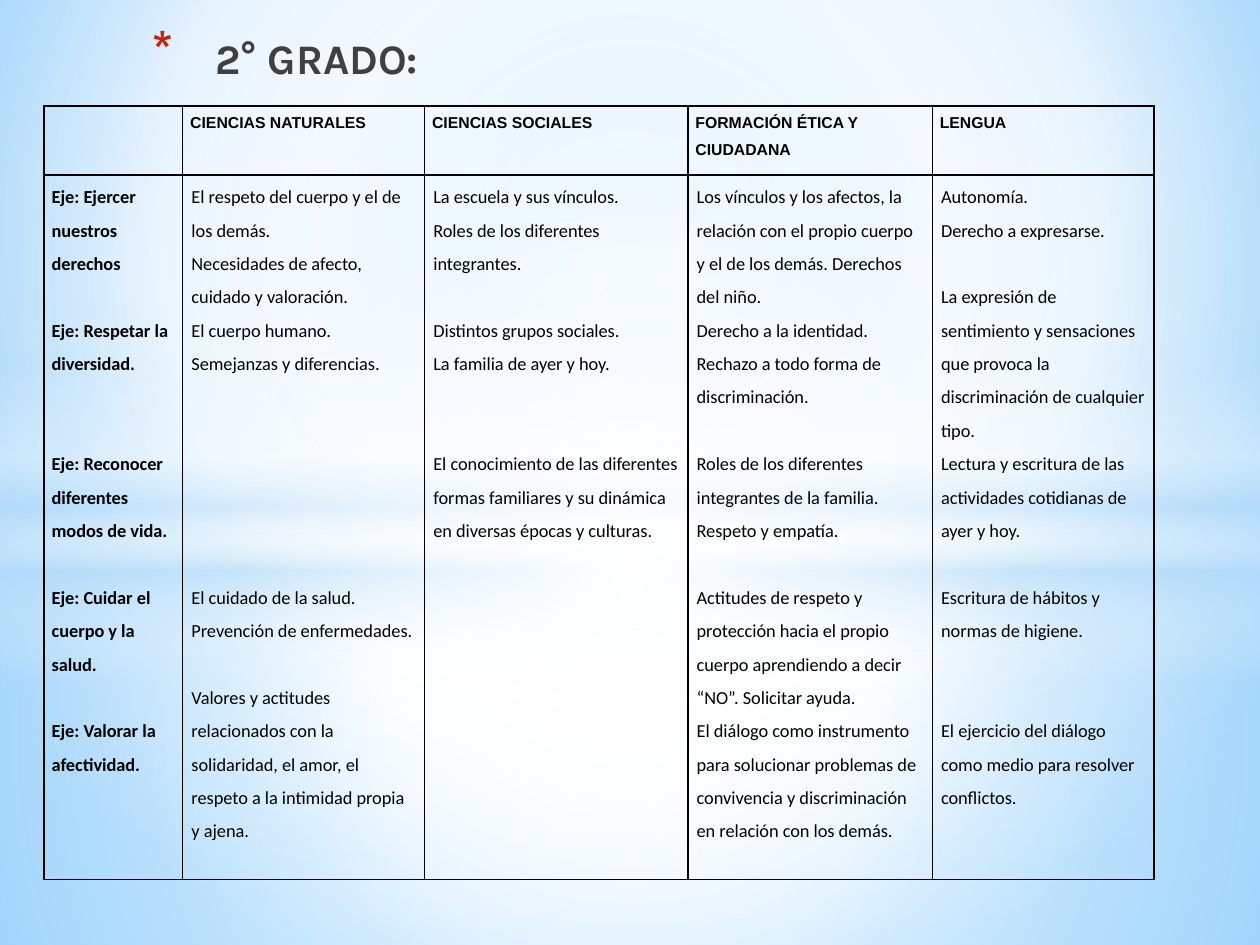
from lxml.etree import SubElement
from pptx import Presentation
from pptx.dml.color import RGBColor
from pptx.enum.shapes import MSO_SHAPE
from pptx.enum.text import MSO_ANCHOR, PP_ALIGN
from pptx.oxml import parse_xml
from pptx.oxml.ns import nsdecls, qn
from pptx.util import Pt

COLORS = {"white": "FFFFFF", "pale": "B4DCFA", "sky": "9ED5FF", "azure": "5BB9FF",
          "title": "404040", "bullet": "C3260C", "ink": "000000"}
CENTER = (50, 50, 50, 50)
BACKDROP = ([(0, "sky", 100), (60, "white", 100), (100, "azure", 100)], (20, 10, 20, 60))
GLOWS = [
    (MSO_SHAPE.RECTANGLE, (0, 304.56, 720, 235.44),
     [(0, "white", 91), (37, "white", 76), (100, "pale", 79)], CENTER),
    (MSO_SHAPE.RECTANGLE, (0, 0, 720, 304.56),
     [(0, "white", 89), (48, "white", 62), (100, "pale", 79)], CENTER),
    (MSO_SHAPE.RECTANGLE, (0, 208.8, 720, 180),
     [(0, "white", 0), (29, "white", 30), (45, "pale", 40), (55, "white", 26),
      (65, "pale", 60), (100, "white", 0)], None),
    (MSO_SHAPE.OVAL, (0, 126, 720, 401.76), [(0, "white", 100), (54, "white", 0)], CENTER),
]

LINE_PITCH = 19.08
COLUMN_WIDTHS = (79.2, 138.24, 150.48, 139.68, 126.72)
ROW_HEIGHTS = (39.6, 402.48)
HEADER_FORMAT = {"name": "Arial", "size": Pt(9), "bold": True}
AXIS_FORMAT = {"name": "Calibri", "size": Pt(10.5), "bold": True}
CONTENT_FORMAT = {"name": "Calibri", "size": Pt(10.5), "bold": False}
SUBJECTS = ("", "CIENCIAS NATURALES", "CIENCIAS SOCIALES", "FORMACIÓN ÉTICA Y CIUDADANA", "LENGUA")
TOPICS = (
    [(0, "Eje: Ejercer nuestros derechos"),
     (1, "Eje: Respetar la diversidad."),
     (2, "Eje: Reconocer diferentes modos de vida."),
     (1, "Eje: Cuidar el cuerpo y la salud."),
     (1, "Eje: Valorar la afectividad.")],
    [(0, "El respeto del cuerpo y el de los demás."),
     (0, "Necesidades de afecto, cuidado y valoración."),
     (0, "El cuerpo humano."),
     (0, "Semejanzas y diferencias."),
     (6, "El cuidado de la salud."),
     (0, "Prevención de enfermedades."),
     (1, "Valores y actitudes relacionados con la solidaridad, el amor, "
         "el respeto a la intimidad propia y ajena.")],
    [(0, "La escuela y sus vínculos."),
     (0, "Roles de los diferentes integrantes."),
     (1, "Distintos grupos sociales."),
     (0, "La familia de ayer y hoy."),
     (2, "El conocimiento de las diferentes formas familiares y su dinámica "
         "en diversas épocas y culturas.")],
    [(0, "Los vínculos y los afectos, la relación con el propio cuerpo "
         "y el de los demás. Derechos del niño."),
     (0, "Derecho a la identidad."),
     (0, "Rechazo a todo forma de discriminación."),
     (1, "Roles de los diferentes integrantes de la familia."),
     (0, "Respeto y empatía."),
     (1, "Actitudes de respeto y protección hacia el propio cuerpo "
         "aprendiendo a decir “NO”. Solicitar ayuda."),
     (0, "El diálogo como instrumento para solucionar problemas de convivencia "
         "y discriminación en relación con los demás.")],
    [(0, "Autonomía."),
     (0, "Derecho a expresarse."),
     (1, "La expresión de sentimiento y sensaciones que provoca "
         "la discriminación de cualquier tipo."),
     (0, "Lectura y escritura de las actividades cotidianas de ayer y hoy."),
     (1, "Escritura de hábitos y normas de higiene."),
     (2, "El ejercicio del diálogo como medio para resolver conflictos.")],
)


def apply_format(target, values):
    """Set each attribute named in the format values."""
    for name, value in values.items():
        setattr(target, name, value)


def apply_gradient(fill, owner, stops, focus):
    """Give a fill its stops, radial around a focus or running downwards."""
    fill.gradient()
    gradient = owner.find(".//" + qn("a:gradFill"))
    for child in list(gradient):
        gradient.remove(child)
    stop_list = SubElement(gradient, qn("a:gsLst"))
    for position, color, opacity in stops:
        stop = SubElement(stop_list, qn("a:gs"), pos=str(position * 1000))
        tint = SubElement(stop, qn("a:srgbClr"), val=COLORS[color])
        SubElement(tint, qn("a:alpha"), val=str(opacity * 1000))
    if focus:
        circle = SubElement(gradient, qn("a:path"), path="circle")
        SubElement(circle, qn("a:fillToRect"),
                   {side: str(share * 1000) for side, share in zip("ltrb", focus)})
    else:
        SubElement(gradient, qn("a:lin"), ang="5400000", scaled="0")


def add_backdrop(slide):
    """Paint the sky background and its layered glows."""
    apply_gradient(slide.background.fill, slide.element, *BACKDROP)
    for outline, box, stops, focus in GLOWS:
        glow = slide.shapes.add_shape(outline, *map(Pt, box))
        glow.shadow.inherit = False
        glow.line.fill.background()
        apply_gradient(glow.fill, glow.element, stops, focus)


def add_title(slide, box):
    """Write the grade title with its asterisk bullet."""
    frame = slide.shapes.add_textbox(*map(Pt, box)).text_frame
    apply_format(frame, {"word_wrap": True, "vertical_anchor": MSO_ANCHOR.TOP})
    heading = frame.paragraphs[0]
    heading.alignment = PP_ALIGN.LEFT
    grade = heading.add_run()
    grade.text = "2° GRADO:"
    apply_format(grade.font, {"name": "Karla", "size": Pt(24), "bold": True})
    grade.font.color.rgb = RGBColor.from_string(COLORS["title"])
    indents = heading._p.get_or_add_pPr()
    indents.set("marL", str(Pt(50.4)))
    indents.set("indent", str(Pt(-36)))
    bullet_color = SubElement(indents, qn("a:buClr"))
    SubElement(bullet_color, qn("a:srgbClr"), val=COLORS["bullet"])
    SubElement(indents, qn("a:buSzPct"), val="128000")
    SubElement(indents, qn("a:buChar"), char="*")


def fill_cell(cell, entries, text_format, inset):
    """Write the entries of a cell, each after its number of free lines, and rule its edges."""
    cell.fill.background()
    apply_format(cell, {"margin_left": Pt(inset), "margin_right": Pt(inset),
                        "margin_top": 0, "margin_bottom": 0})
    for index, (free_lines, text) in enumerate(entries):
        frame = cell.text_frame
        entry = frame.add_paragraph() if index else frame.paragraphs[0]
        apply_format(entry, {"line_spacing": 1.5, "space_before": Pt(free_lines * LINE_PITCH)})
        if text:
            topic = entry.add_run()
            topic.text = text
            apply_format(topic.font, text_format)
            topic.font.color.rgb = RGBColor.from_string(COLORS["ink"])
    for index, side in enumerate("LRTB"):
        edge = parse_xml(f'<a:ln{side} {nsdecls("a")} w="{Pt(1)}"><a:solidFill>'
                         f'<a:srgbClr val="{COLORS["ink"]}"/></a:solidFill></a:ln{side}>')
        cell._tc.get_or_add_tcPr().insert(index, edge)


def add_curriculum(slide, left, top):
    """Lay out the table of axes against school subjects."""
    curriculum = slide.shapes.add_table(
        len(ROW_HEIGHTS), len(COLUMN_WIDTHS), Pt(left), Pt(top),
        Pt(sum(COLUMN_WIDTHS)), Pt(sum(ROW_HEIGHTS))).table
    apply_format(curriculum, {"first_row": False, "horz_banding": False})
    for row, height in zip(curriculum.rows, ROW_HEIGHTS):
        row.height = Pt(height)
    for index, width in enumerate(COLUMN_WIDTHS):
        curriculum.columns[index].width = Pt(width)
        fill_cell(curriculum.cell(0, index), [(0, SUBJECTS[index])], HEADER_FORMAT, 4.32)
        fill_cell(curriculum.cell(1, index), TOPICS[index],
                  CONTENT_FORMAT if index else AXIS_FORMAT, 5.04 if index else 4.32)


def main():
    """Build the second-grade curriculum slide."""
    deck = Presentation()
    apply_format(deck, {"slide_width": Pt(720), "slide_height": Pt(540)})
    slide = deck.slides.add_slide(deck.slide_layouts[6])
    add_backdrop(slide)
    add_title(slide, (65.52, 15.12, 565.2, 45.36))
    add_curriculum(slide, 25.2, 60.48)
    deck.save("out.pptx")


if __name__ == "__main__":
    main()
